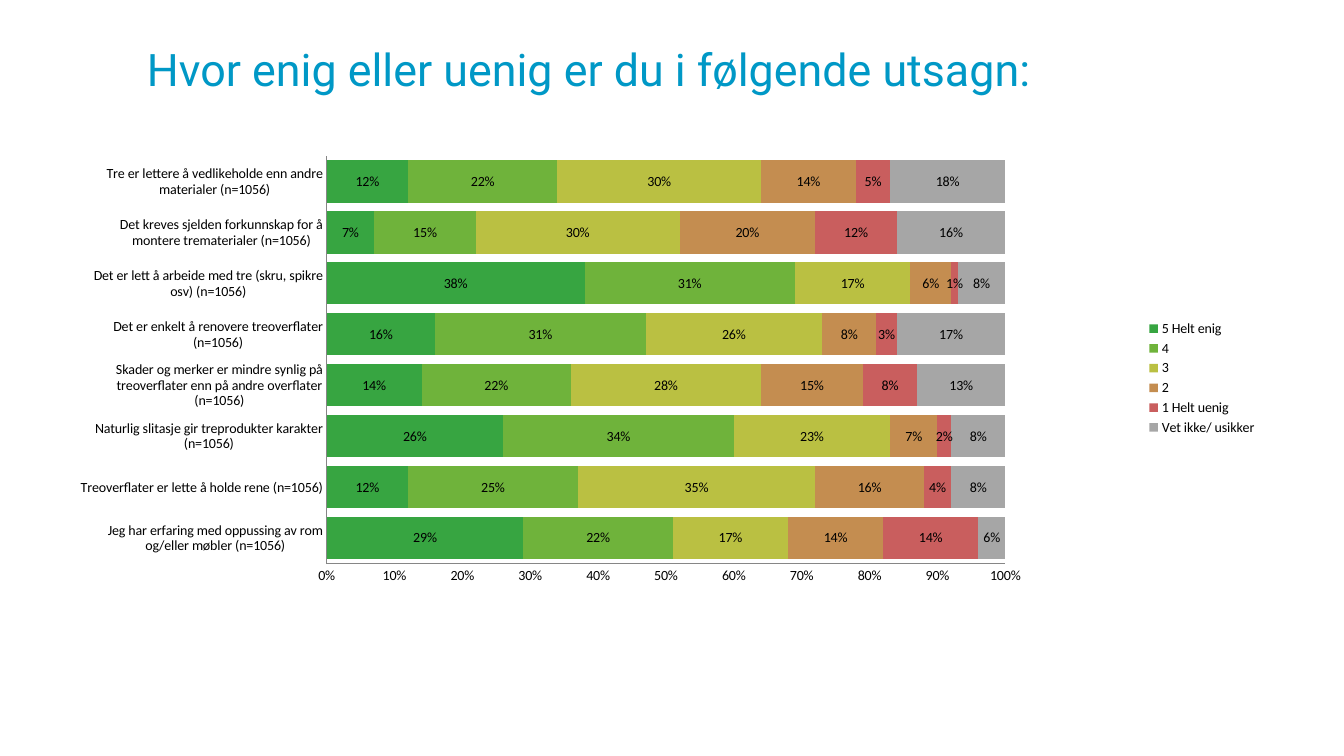
from pptx import Presentation
from pptx.chart.data import CategoryChartData
from pptx.dml.color import RGBColor
from pptx.enum.chart import (XL_CHART_TYPE as ChartType, XL_LABEL_POSITION as LabelPosition,
                             XL_LEGEND_POSITION as LegendPosition, XL_TICK_MARK as TickMark)
from pptx.enum.text import MSO_ANCHOR as Anchor
from pptx.oxml import parse_xml
from pptx.oxml.ns import nsdecls
from pptx.util import Emu, Pt

PX = 9144  # 100 px per inch

# Statements from bottom to top, with the shares in the order of ANSWERS
STATEMENTS = {
    "Jeg har erfaring med oppussing av rom og/eller møbler (n=1056)": (29, 22, 17, 14, 14, 6),
    "Treoverflater er lette å holde rene (n=1056)": (12, 25, 35, 16, 4, 8),
    "Naturlig slitasje gir treprodukter karakter (n=1056)": (26, 34, 23, 7, 2, 8),
    "Skader og merker er mindre synlig på treoverflater enn på andre overflater (n=1056)":
        (14, 22, 28, 15, 8, 13),
    "Det er enkelt å renovere treoverflater (n=1056)": (16, 31, 26, 8, 3, 17),
    "Det er lett å arbeide med tre (skru, spikre osv) (n=1056)": (38, 31, 17, 6, 1, 8),
    "Det kreves sjelden forkunnskap for å montere trematerialer (n=1056)":
        (7, 15, 30, 20, 12, 16),
    "Tre er lettere å vedlikeholde enn andre materialer (n=1056)": (12, 22, 30, 14, 5, 18),
}
ANSWERS = {"5 Helt enig": "37A541", "4": "6FB33B", "3": "BAC042",
           "2": "C48D50", "1 Helt uenig": "C95E5E", "Vet ikke/ usikker": "A6A6A6"}


def color(value):
    return RGBColor.from_string(value)


def set_font(font, *, name="Calibri", size=10, fill="000000"):
    font.name, font.size, font.bold = name, Pt(size), False
    font.color.rgb = color(fill)


def write(frame, text, *, anchor=Anchor.MIDDLE, **font_format):
    frame.word_wrap = True
    frame.vertical_anchor = anchor
    run = frame.paragraphs[0].add_run()
    run.text = text
    set_font(run.font, **font_format)


class SlideBuilder:
    title_style = {"name": "Roboto", "size": 32, "fill": "0098C6"}
    axis_color = "868686"

    def __init__(self, presentation):
        self.slide = presentation.slides.add_slide(presentation.slide_layouts[6])

    def title(self, text, *box):
        shape = self.slide.shapes.add_textbox(*(Emu(n * PX) for n in box))
        write(shape.text_frame, text, **self.title_style)

    def stacked_bars(self, statements, answers, plot, *box):
        data = CategoryChartData(number_format="0%")
        data.categories = list(statements)
        for answer, shares in zip(answers, zip(*statements.values())):
            data.add_series(answer, [share / 100 for share in shares])
        chart = self.slide.shapes.add_chart(
            ChartType.BAR_STACKED, *(Emu(n * PX) for n in box), data).chart
        chart.has_title = False
        set_font(chart.font)

        # Bars and their labels
        bars = chart.plots[0]
        bars.gap_width, bars.overlap, bars.vary_by_categories = 21, 100, False
        for series, fill in zip(bars.series, answers.values()):
            series.format.fill.solid()
            series.format.fill.fore_color.rgb = color(fill)
            labels = series.data_labels
            labels.show_value = True
            labels.number_format, labels.number_format_is_linked = "0%", False
            labels.position = LabelPosition.CENTER
            set_font(labels.font)

        # Axes and legend
        for axis in (chart.category_axis, chart.value_axis):
            axis.major_tick_mark = axis.minor_tick_mark = TickMark.NONE
            axis.has_major_gridlines = False
            axis.format.line.color.rgb = color(self.axis_color)
            axis.format.line.width = Pt(0.75)
            set_font(axis.tick_labels.font)
        value_axis = chart.value_axis
        value_axis.minimum_scale, value_axis.maximum_scale, value_axis.major_unit = 0, 1, 0.1
        value_axis.tick_labels.number_format = "0%"
        value_axis.tick_labels.number_format_is_linked = False
        chart.has_legend = True
        chart.legend.position = LegendPosition.RIGHT
        chart.legend.include_in_layout = False
        set_font(chart.legend.font)
        self.place_plot(chart, plot)

    def place_plot(self, chart, plot):
        area = chart.element.chart.plotArea
        for layout in area.findall("{*}layout"):
            area.remove(layout)
        places = "".join(f'<c:{key} val="{value}"/>' for key, value in zip("xywh", plot))
        area.insert(0, parse_xml(
            f'<c:layout {nsdecls("c")}><c:manualLayout><c:layoutTarget val="inner"/>'
            f'<c:xMode val="edge"/><c:yMode val="edge"/>{places}</c:manualLayout></c:layout>'))


def main():
    presentation = Presentation()
    presentation.slide_width, presentation.slide_height = Emu(1333 * PX), Emu(750 * PX)
    builder = SlideBuilder(presentation)
    builder.title("Hvor enig eller uenig er du i følgende utsagn:", 136, 6, 1130, 125)
    builder.stacked_bars(STATEMENTS, ANSWERS, (0.21, 0.07, 0.57, 0.79), 76, 119, 1181, 512)
    presentation.save("out.pptx")


if __name__ == "__main__":
    main()
